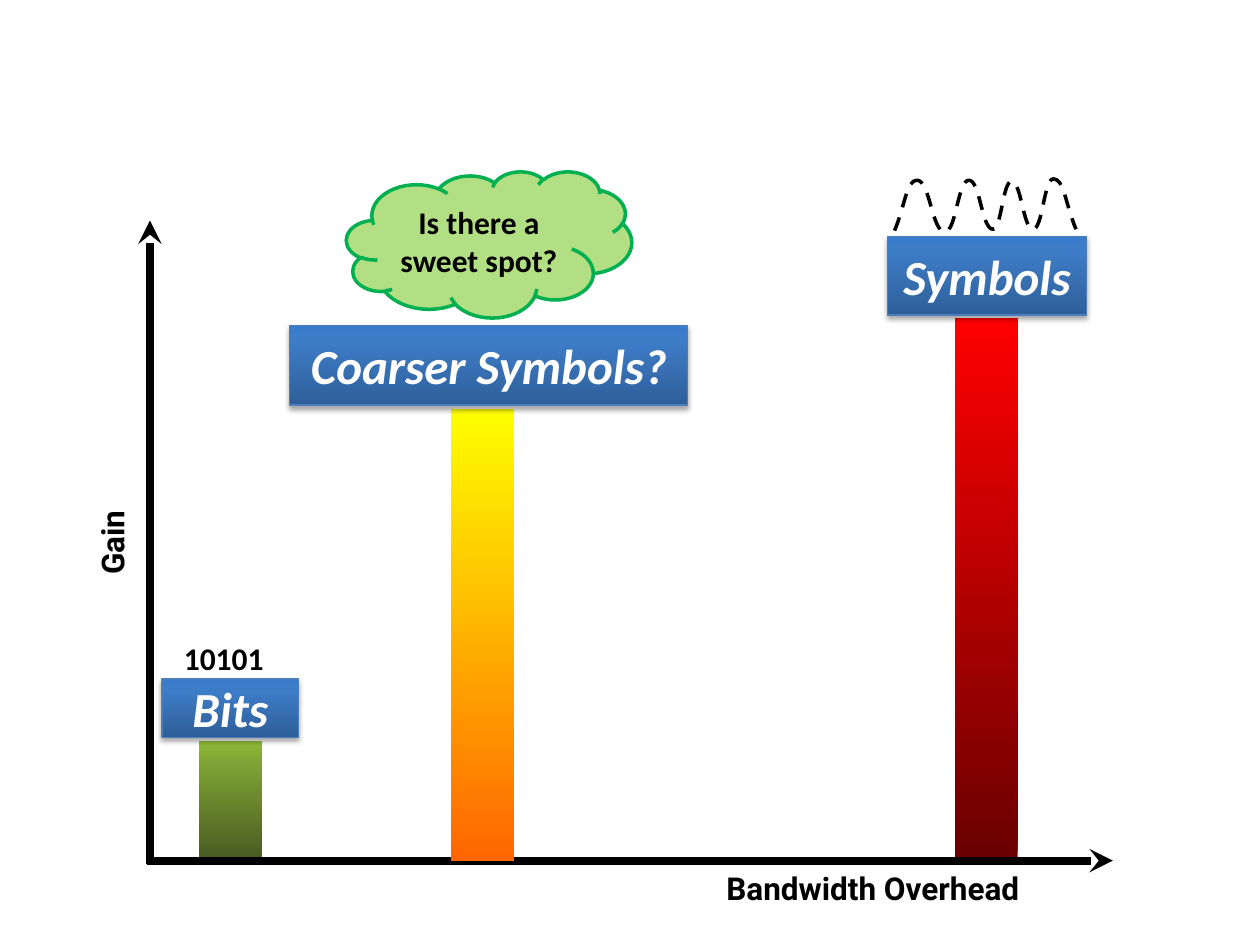
from lxml.etree import SubElement
from pptx import Presentation
from pptx.dml.color import RGBColor
from pptx.enum.dml import MSO_LINE
from pptx.enum.shapes import MSO_CONNECTOR, MSO_SHAPE
from pptx.enum.text import MSO_ANCHOR, MSO_AUTO_SIZE, PP_ALIGN
from pptx.oxml.ns import qn
from pptx.util import Pt

COLORS = {
    "black": "000000", "white": "FFFFFF", "label_line": "4B7EBC",
    "cloud": "92D050", "cloud_line": "00B050",
}
# Gradient stops run from the bottom to the top of a shape
GRADIENTS = {
    "label": [(0, "2F5F99"), (80, "3D7CC7"), (100, "3A7CCB")],
    "green": [(0, "485A21"), (80, "7EA135"), (100, "8FB938")],
    "red": [(0, "6A0000"), (100, "FF0000")],
    "yellow": [(0, "FF6600"), (100, "FFFF00")],
}
BAR_WIDTH = 36


def add(parent, tag, **attributes):
    values = {name: str(value) for name, value in attributes.items()}
    return SubElement(parent, qn(tag), values)


def write(frame, text, size=18, font="Calibri", color="black", italic=False,
          align=PP_ALIGN.LEFT):
    para = frame.paragraphs[0]
    para.alignment = align
    span = para.add_run()
    span.text = text
    span.font.size = Pt(size)
    span.font.name = font
    span.font.bold = True
    span.font.italic = italic
    span.font.color.rgb = RGBColor.from_string(COLORS[color])


class Painter:
    def __init__(self, page):
        self.page = page

    def shape(self, kind, left, top, width, height):
        box = self.page.shapes.add_shape(
            kind, Pt(left), Pt(top), Pt(width), Pt(height))
        box.shadow.inherit = False
        box.line.fill.background()
        box.text_frame.word_wrap = True
        box.text_frame.vertical_anchor = MSO_ANCHOR.MIDDLE
        return box

    def outline(self, item, color, width):
        item.line.color.rgb = RGBColor.from_string(COLORS[color])
        item.line.width = Pt(width)

    def bar(self, left, top, width, height, gradient):
        box = self.shape(MSO_SHAPE.RECTANGLE, left, top, width, height)
        box.fill.gradient()
        box.fill.gradient_angle = 90
        stops = box._element.spPr.find(".//" + qn("a:gsLst"))
        stops.clear()
        for percent, color in GRADIENTS[gradient]:
            stop = add(stops, "a:gs", pos=percent * 1000)
            add(stop, "a:srgbClr", val=color)
        return box

    def label(self, text, left, top, width, height):
        box = self.bar(left, top, width, height, "label")
        self.outline(box, "label_line", 0.75)
        effects = box._element.spPr.find(qn("a:effectLst"))
        shadow = add(effects, "a:outerShdw", blurRad=Pt(3.1), dist=Pt(1.8),
                     dir=90 * 60000, rotWithShape=0)
        tint = add(shadow, "a:srgbClr", val=COLORS["black"])
        add(tint, "a:alpha", val=35000)
        write(box.text_frame, text, size=28, color="white", italic=True,
              align=PP_ALIGN.CENTER)

    def cloud(self, text, left, top, width, height):
        box = self.shape(MSO_SHAPE.CLOUD, left, top, width, height)
        box.fill.solid()
        box.fill.fore_color.rgb = RGBColor.from_string(COLORS["cloud"])
        tint = box._element.spPr.find(qn("a:solidFill"))[0]
        add(tint, "a:alpha", val=70000)
        self.outline(box, "cloud_line", 2)
        write(box.text_frame, text, align=PP_ALIGN.CENTER)

    def axis(self, start, end):
        line = self.page.shapes.add_connector(
            MSO_CONNECTOR.STRAIGHT, *map(Pt, start + end))
        self.outline(line, "black", 4.5)
        add(line.line._get_or_add_ln(), "a:tailEnd", type="stealth")
        add(line._element.spPr, "a:effectLst")

    def caption(self, text, left, top, width, height, rotation=0, **style):
        box = self.page.shapes.add_textbox(
            Pt(left), Pt(top), Pt(width), Pt(height))
        box.rotation = rotation
        box.text_frame.word_wrap = False
        box.text_frame.auto_size = MSO_AUTO_SIZE.SHAPE_TO_FIT_TEXT
        write(box.text_frame, text, **style)

    def wave(self, turns):
        """Draw a dashed curve that is level at each inner turning point."""
        points = []
        last = len(turns) - 2
        for index, ((x0, y0), (x1, y1)) in enumerate(zip(turns, turns[1:])):
            reach, middle = 0.47 * (x1 - x0), (y0 + y1) / 2
            points += [(x0 + reach, middle if index == 0 else y0),
                       (x1 - reach, middle if index == last else y1),
                       (x1, y1)]
        builder = self.page.shapes.build_freeform(*map(Pt, turns[0]))
        builder.add_line_segments(
            [(Pt(x), Pt(y)) for x, y in points], close=False)
        curve = builder.convert_to_shape()
        # Join each three straight segments into one Bezier segment
        segments = list(curve._element.iter(qn("a:lnTo")))
        for first in range(0, len(segments), 3):
            bezier = add(segments[first].getparent(), "a:cubicBezTo")
            for segment in segments[first:first + 3]:
                bezier.append(segment[0])
                segment.getparent().remove(segment)
        curve.shadow.inherit = False
        curve.fill.background()
        self.outline(curve, "black", 2)
        curve.line.dash_style = MSO_LINE.DASH


def main():
    deck = Presentation()
    deck.slide_width, deck.slide_height = Pt(720), Pt(540)
    painter = Painter(deck.slides.add_slide(deck.slide_layouts[6]))

    # Bars behind the axes
    painter.bar(113.5, 423.5, BAR_WIDTH, 68.5, "green")
    painter.bar(545.5, 181.5, BAR_WIDTH, 309, "red")

    # Axes
    painter.axis((84, 491.8), (636, 491.8))
    painter.axis((85.7, 494), (85.7, 126))

    # Middle bar, labels and cloud
    painter.label("Bits", 92.6, 388, 78, 33.5)
    painter.label("Symbols", 507, 135, 114, 45)
    painter.bar(257.8, 234, BAR_WIDTH, 258, "yellow")
    painter.cloud("Is there a sweet spot?", 198, 98, 163, 83.5)
    painter.label("Coarser Symbols?", 165.6, 186, 227.5, 45.5)

    # Captions
    painter.caption("Gain", 37.5, 294.5, 53, 29, rotation=270, font="Roboto")
    painter.caption("Bandwidth Overhead", 408, 493, 194.5, 29, font="Roboto")
    painter.caption("10101", 98, 361.5, 60.5, 29)

    # Analog wave above the symbols label
    painter.wave([
        (511.2, 131.8), (524, 103), (540, 132.5), (553.7, 103), (567.4, 131),
        (578, 103.7), (590.4, 131), (602, 102.2), (614.9, 131)])

    deck.save("out.pptx")


if __name__ == "__main__":
    main()
